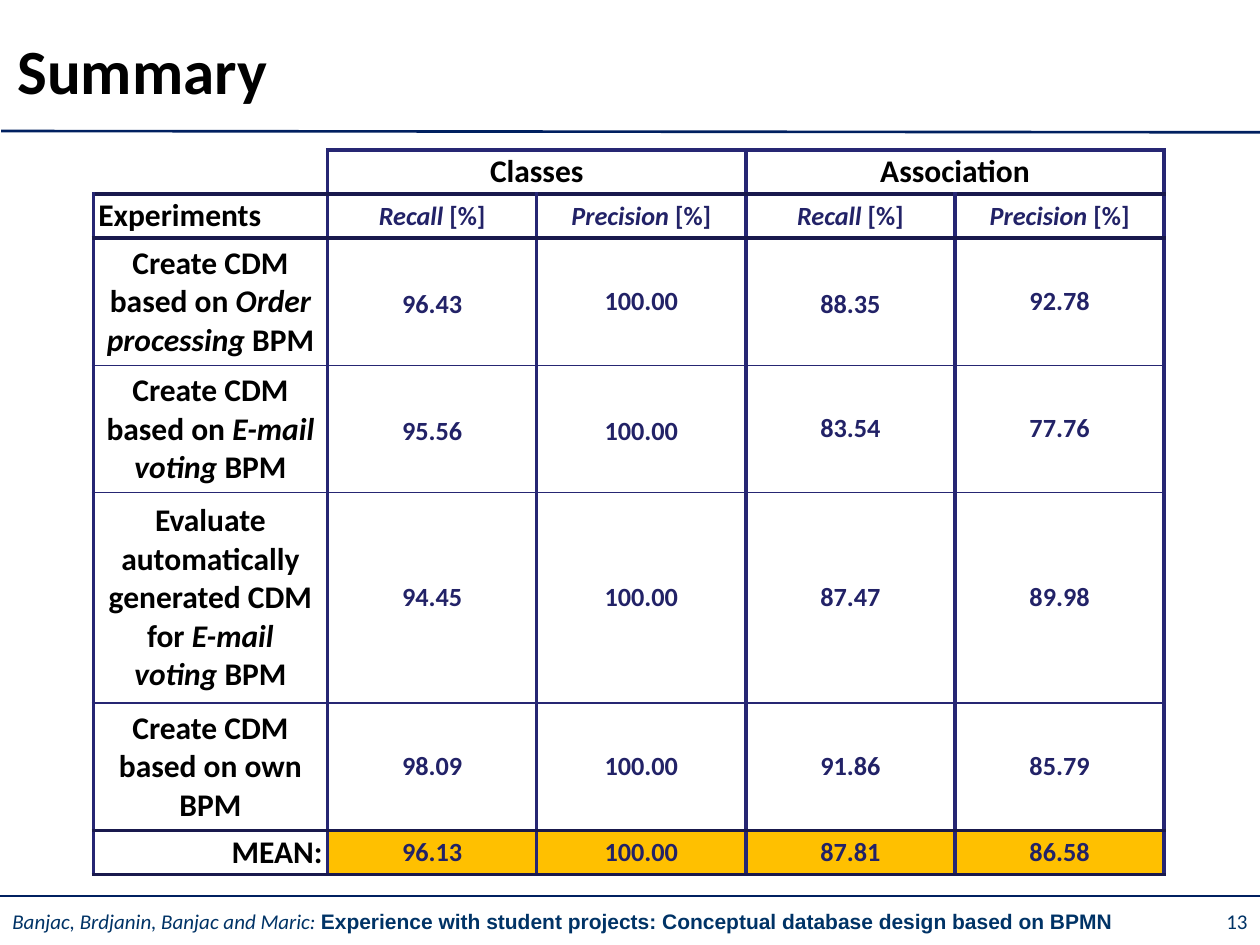
from dataclasses import dataclass

import lxml.etree
import pptx
import pptx.dml.color
import pptx.enum.shapes
import pptx.enum.text
import pptx.oxml.ns
import pptx.util

Inches = pptx.util.Inches
Pt = pptx.util.Pt
Align = pptx.enum.text.PP_ALIGN
qn = pptx.oxml.ns.qn

COLORS = {
    "black": "000000",
    "white": "FFFFFF",
    "footer": "003366",
    "rule": "002060",
    "figure": "222267",
    "grid": "262673",
    "grid_dark": "19194D",
    "mean": "FFC000",
}


@dataclass(frozen=True)
class Run:
    text: str
    italic: bool = False
    bold: bool = True
    font: str = "Calibri"


@dataclass(frozen=True)
class Style:
    size: float
    color: str
    align: Align = Align.LEFT
    spacing: float = 1.0


@dataclass(frozen=True)
class Border:
    color: str
    width: float


@dataclass(frozen=True)
class Experiment:
    label: list[list[Run]]
    figures: list[str]
    margins: tuple[float, float] = (0.1, 0.05)
    loose_columns: tuple[int, ...] = ()


HEADING = Style(18, "black", Align.CENTER)
FIGURE = Style(15, "figure", Align.CENTER)
LOOSE_FIGURE = Style(15, "figure", Align.CENTER, 1.15)
TIGHT = (0.04, 0.02)
FLAT = (0.08, 0)

THICK = Border("grid", 2.25)
DARK = Border("grid_dark", 2.25)
THIN = Border("grid", 1)
HIDDEN = Border("white", 1)
ROW_EDGES = [THICK, DARK, DARK, THIN, THIN, THIN, DARK, DARK]

COLUMN_WIDTHS = [1.86] + [1.66] * 4
ROW_HEIGHTS = [0.35, 0.35, 1.01, 1.01, 1.67, 1.01, 0.35]

RECALL = [Run("Recall", italic=True), Run(" [%]")]
PRECISION = [Run("Precision ", italic=True), Run("[%]")]

EXPERIMENTS = [
    Experiment(
        [[Run("Create CDM based on "), Run("Order processing", italic=True), Run(" BPM")]],
        ["96.43", "100.00", "88.35", "92.78"],
        loose_columns=(1, 3),
    ),
    Experiment(
        [[Run("Create CDM based on "), Run("E-mail voting ", italic=True), Run("BPM")]],
        ["95.56", "100.00", "83.54", "77.76"],
        margins=(0.07, 0),
        loose_columns=(1, 2),
    ),
    Experiment(
        [
            [Run("Evaluate automatically generated CDM")],
            [Run("for "), Run("E-mail voting ", italic=True), Run("BPM")],
        ],
        ["94.45", "100.00", "87.47", "89.98"],
    ),
    Experiment(
        [[Run("Create CDM based on own BPM")]],
        ["98.09", "100.00", "91.86", "85.79"],
    ),
]
MEANS = ["96.13", "100.00", "87.81", "86.58"]


def rgb(name: str) -> pptx.dml.color.RGBColor:
    return pptx.dml.color.RGBColor.from_string(COLORS[name])


def write(frame, paragraphs: list[list[Run]], style: Style) -> None:
    for index, runs in enumerate(paragraphs):
        paragraph = frame.add_paragraph() if index else frame.paragraphs[0]
        paragraph.alignment = style.align
        paragraph.line_spacing = style.spacing
        for part in runs:
            run = paragraph.add_run()
            run.text = part.text
            run.font.name = part.font
            run.font.size = Pt(style.size)
            run.font.bold = part.bold
            run.font.italic = part.italic
            run.font.color.rgb = rgb(style.color)


def add_text(slide, left: float, top: float, width: float, height: float,
             runs: list[Run], style: Style) -> None:
    box = slide.shapes.add_textbox(Inches(left), Inches(top), Inches(width), Inches(height))
    box.text_frame.word_wrap = True
    box.text_frame.vertical_anchor = pptx.enum.text.MSO_ANCHOR.MIDDLE
    write(box.text_frame, [runs], style)


def add_rule(slide, x1: float, y1: float, x2: float, y2: float) -> None:
    rule = slide.shapes.add_connector(
        pptx.enum.shapes.MSO_CONNECTOR.STRAIGHT,
        Inches(x1), Inches(y1), Inches(x2), Inches(y2),
    )
    rule.line.color.rgb = rgb("rule")
    rule.line.width = Pt(1.5)
    lxml.etree.SubElement(rule._element.spPr, qn("a:effectLst"))


def set_border(cell, side: str, border: Border) -> None:
    properties = cell._tc.get_or_add_tcPr()
    line = lxml.etree.SubElement(properties, qn(f"a:ln{side}"), w=str(Pt(border.width)))
    fill = lxml.etree.SubElement(line, qn("a:solidFill"))
    lxml.etree.SubElement(fill, qn("a:srgbClr"), val=COLORS[border.color])


def set_margins(cell, margins: tuple[float, float]) -> None:
    cell.margin_left = cell.margin_right = Inches(margins[0])
    cell.margin_top = cell.margin_bottom = Inches(margins[1])


def fill_cell(cell, paragraphs: list[list[Run]], style: Style,
              margins: tuple[float, float] = TIGHT) -> None:
    set_margins(cell, margins)
    write(cell.text_frame, paragraphs, style)


def format_grid(table) -> None:
    last_row = len(ROW_HEIGHTS) - 1
    for row in range(len(ROW_HEIGHTS)):
        for column in range(len(COLUMN_WIDTHS)):
            cell = table.cell(row, column)
            corner = row == column == 0
            set_border(cell, "L", HIDDEN if corner else THICK)
            set_border(cell, "R", THICK)
            set_border(cell, "T", HIDDEN if corner else ROW_EDGES[row])
            set_border(cell, "B", ROW_EDGES[row + 1])
            cell.fill.solid()
            cell.fill.fore_color.rgb = rgb("mean" if row == last_row and column else "white")
            cell.vertical_anchor = pptx.enum.text.MSO_ANCHOR.MIDDLE
            set_margins(cell, TIGHT)


def add_results(slide) -> None:
    table = slide.shapes.add_table(
        len(ROW_HEIGHTS), len(COLUMN_WIDTHS), Inches(0.74), Inches(1.19),
        Inches(sum(COLUMN_WIDTHS)), Inches(sum(ROW_HEIGHTS)),
    ).table
    table.first_row = table.horz_banding = False
    for column, width in zip(table.columns, COLUMN_WIDTHS):
        column.width = Inches(width)
    for row, height in zip(table.rows, ROW_HEIGHTS):
        row.height = Inches(height)
    format_grid(table)

    for column, group, margins in [(1, "Classes", TIGHT), (3, "Association", FLAT)]:
        table.cell(0, column).merge(table.cell(0, column + 1))
        fill_cell(table.cell(0, column), [[Run(group)]], HEADING, margins)
    fill_cell(table.cell(1, 0), [[Run("Experiments")]], Style(18, "black"))
    for column, measure in enumerate([RECALL, PRECISION] * 2, start=1):
        fill_cell(table.cell(1, column), [measure], FIGURE)

    for row, experiment in enumerate(EXPERIMENTS, start=2):
        fill_cell(table.cell(row, 0), experiment.label, HEADING, (0.1, 0.05))
        for column, figure in enumerate(experiment.figures, start=1):
            style = LOOSE_FIGURE if column in experiment.loose_columns else FIGURE
            fill_cell(table.cell(row, column), [[Run(figure)]], style, experiment.margins)

    mean_row = len(ROW_HEIGHTS) - 1
    fill_cell(table.cell(mean_row, 0), [[Run("MEAN:")]], Style(18, "black", Align.RIGHT))
    for column, mean in enumerate(MEANS, start=1):
        fill_cell(table.cell(mean_row, column), [[Run(mean)]], FIGURE,
                  TIGHT if column < 3 else FLAT)


def main() -> None:
    deck = pptx.Presentation()
    deck.slide_width, deck.slide_height = Inches(10), Inches(7.5)
    slide = deck.slides.add_slide(deck.slide_layouts[6])
    footer = [
        Run("Banjac, Brdjanin, Banjac and Maric: ", italic=True, bold=False),
        Run("Experience with student projects: Conceptual database design based on BPMN",
            font="Arial"),
    ]
    add_text(slide, 0, 7.12, 9.53, 0.38, footer, Style(12, "footer"))
    add_rule(slide, 0.01, 1.04, 10.01, 1.05)
    add_rule(slide, -0.02, 7.11, 10.02, 7.11)
    add_text(slide, 0.04, 0.16, 9.76, 0.78, [Run("Summary")], Style(36, "black"))
    add_text(slide, 9.53, 7.12, 0.47, 0.38, [Run("13", bold=False)],
             Style(12, "footer", Align.RIGHT))
    add_results(slide)
    deck.save("out.pptx")


if __name__ == "__main__":
    main()
